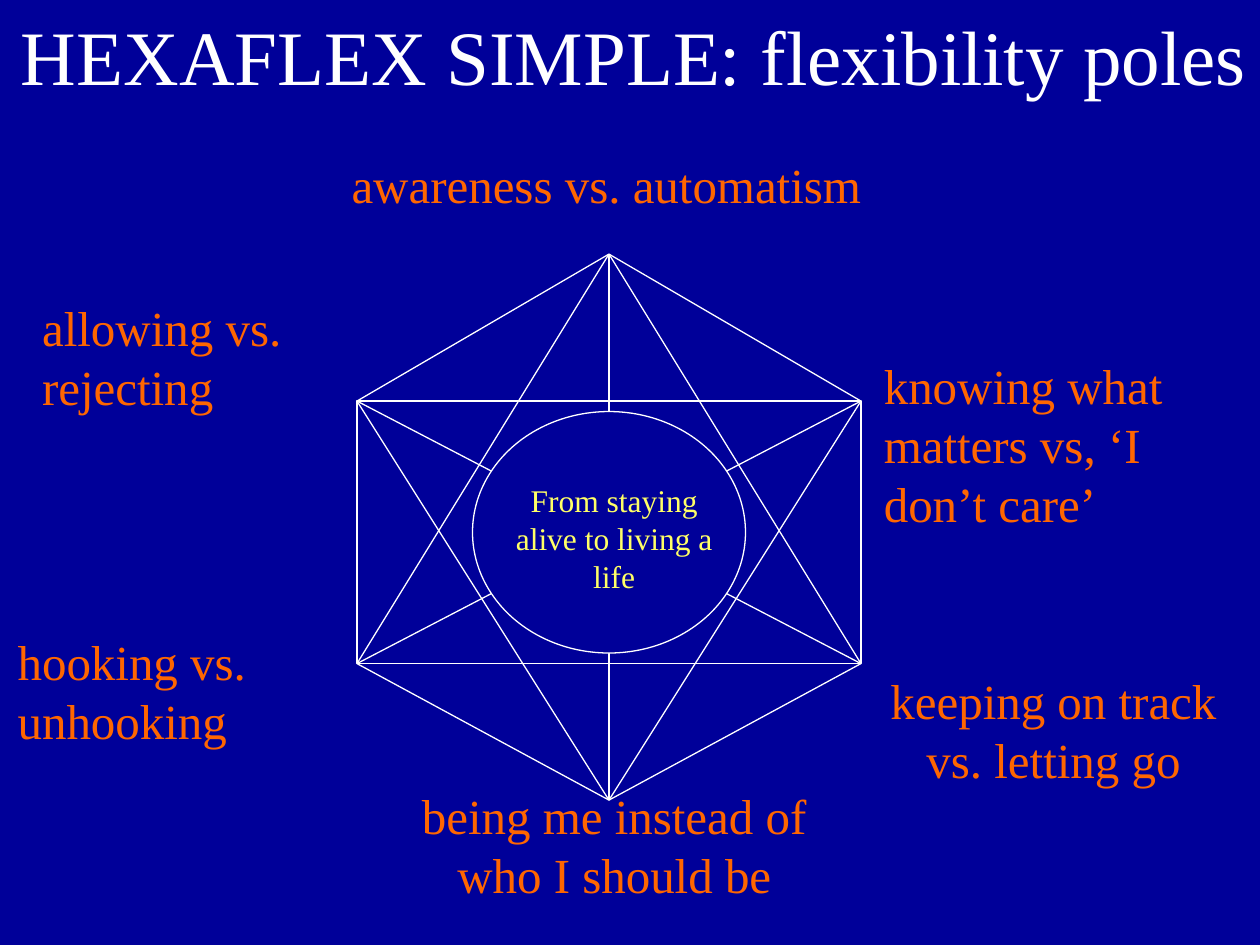
from dataclasses import dataclass
from typing import NamedTuple

from lxml.etree import SubElement
from pptx import Presentation
from pptx.dml.color import RGBColor as Color
from pptx.enum.shapes import MSO_CONNECTOR as Connector, MSO_SHAPE as Preset
from pptx.enum.text import MSO_ANCHOR as Anchor, PP_ALIGN as Align
from pptx.oxml.ns import qn
from pptx.util import Pt


@dataclass(frozen=True)
class Theme:
    back: Color = Color(0x00, 0x00, 0x99)
    line: Color = Color(0xFF, 0xFF, 0xFF)
    title: Color = Color(0xFF, 0xFF, 0xFF)
    pole: Color = Color(0xFF, 0x66, 0x00)
    core: Color = Color(0xFF, 0xFF, 0x66)
    font: str = "Times New Roman"
    title_size: float = 44
    pole_size: float = 28
    core_size: float = 18
    line_width: float = 0.75


class Point(NamedTuple):
    x: float
    y: float


class Area(NamedTuple):
    left: float
    top: float
    width: float
    height: float


class Pole(NamedTuple):
    text: str
    area: Area
    align: Align


THEME = Theme()

LEFT, MIDDLE, RIGHT = 204, 348, 492
TOP, UPPER, LOWER, BOTTOM = 145.2, 229.2, 379.2, 457.2
NORTH, SOUTH = Point(MIDDLE, TOP), Point(MIDDLE, BOTTOM)
NORTH_WEST, NORTH_EAST = Point(LEFT, UPPER), Point(RIGHT, UPPER)
SOUTH_WEST, SOUTH_EAST = Point(LEFT, LOWER), Point(RIGHT, LOWER)

LINKS = [
    (NORTH_WEST, SOUTH_EAST),
    (SOUTH_WEST, NORTH_EAST),
    (SOUTH_WEST, SOUTH),
    (SOUTH, SOUTH_EAST),
    (SOUTH_WEST, NORTH),
    (NORTH, SOUTH_EAST),
    (SOUTH, NORTH_WEST),
    (SOUTH, NORTH_EAST),
    (NORTH, SOUTH),
]

POLES = [
    Pole("awareness vs. automatism", Area(144, 84.5, 405, 41), Align.CENTER),
    Pole("allowing vs. rejecting", Area(17, 166.5, 193, 75), Align.LEFT),
    Pole("hooking vs. unhooking", Area(3, 357.5, 246, 133), Align.LEFT),
    Pole("being me instead of\vwho I should be", Area(200, 445.5, 302, 75), Align.CENTER),
    Pole("knowing what matters vs, ‘I don’t care’", Area(498, 199.5, 222, 109), Align.LEFT),
    Pole("keeping on track vs. letting go", Area(492, 379.5, 220, 75), Align.CENTER),
]


def add_text(page, text: str, area: Area, *, size: float, color: Color,
             align: Align = Align.CENTER, anchor: Anchor = Anchor.TOP) -> None:
    box = page.shapes.add_textbox(*map(Pt, area))
    frame = box.text_frame
    frame.word_wrap = True
    frame.vertical_anchor = anchor
    para = frame.paragraphs[0]
    para.text = text
    para.alignment = align
    for span in para.runs:
        span.font.name = THEME.font
        span.font.size = Pt(size)
        span.font.color.rgb = color


def add_outline(page, preset: Preset, area: Area, *, filled: bool = False) -> None:
    shape = page.shapes.add_shape(preset, *map(Pt, area))
    shape.shadow.inherit = False
    if filled:
        shape.fill.solid()
        shape.fill.fore_color.rgb = THEME.back
    else:
        shape.fill.background()
    shape.line.color.rgb = THEME.line
    shape.line.width = Pt(THEME.line_width)


def add_link(page, start: Point, end: Point) -> None:
    link = page.shapes.add_connector(Connector.STRAIGHT, *map(Pt, (*start, *end)))
    link.line.color.rgb = THEME.line
    link.line.width = Pt(THEME.line_width)
    SubElement(link._element.spPr, qn("a:effectLst"))


def main() -> None:
    deck = Presentation()
    deck.slide_width, deck.slide_height = Pt(720), Pt(540)
    page = deck.slides.add_slide(deck.slide_layouts[6])
    page.background.fill.solid()
    page.background.fill.fore_color.rgb = THEME.back

    add_text(page, "HEXAFLEX SIMPLE: flexibility poles", Area(-20, -23, 765, 109),
             size=THEME.title_size, color=THEME.title, anchor=Anchor.MIDDLE)

    width = RIGHT - LEFT
    add_outline(page, Preset.RECTANGLE, Area(LEFT, UPPER, width, LOWER - UPPER))
    add_outline(page, Preset.ISOSCELES_TRIANGLE, Area(LEFT, TOP, width, UPPER - TOP))
    for start, end in LINKS:
        add_link(page, start, end)

    add_outline(page, Preset.OVAL, Area(MIDDLE - 78, 235.2, 156, 138), filled=True)
    add_text(page, "From staying alive to living a life", Area(282, 271.5, 138, 73),
             size=THEME.core_size, color=THEME.core)
    for pole in POLES:
        add_text(page, pole.text, pole.area, size=THEME.pole_size,
                 color=THEME.pole, align=pole.align)

    deck.save("out.pptx")


if __name__ == "__main__":
    main()
